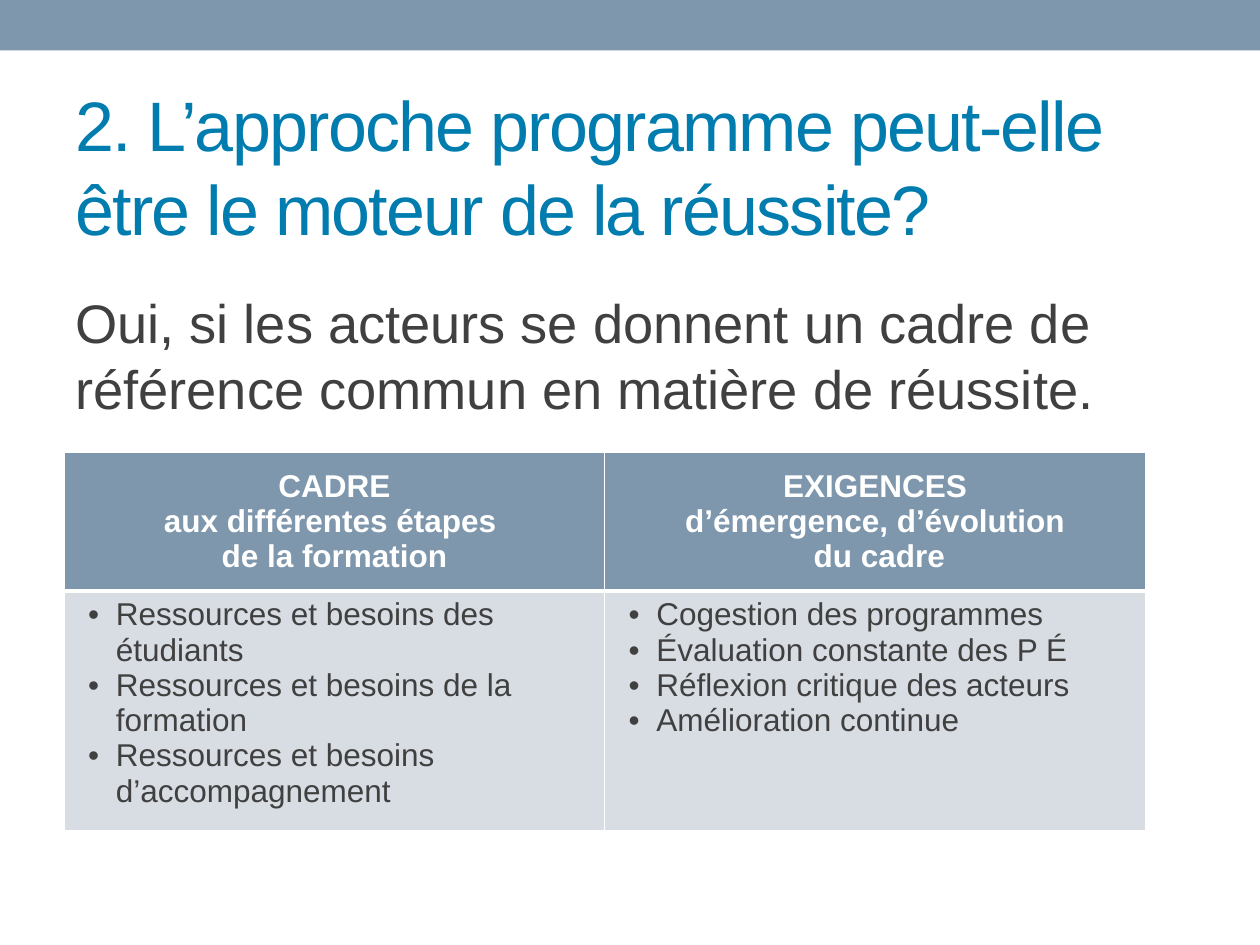
from pptx import Presentation, util as u
from pptx.dml.color import RGBColor
from pptx.enum import shapes, text
from lxml import etree

Inches, Pt = u.Inches, u.Pt
NS = "http://schemas.openxmlformats.org/drawingml/2006/main"
BLUE, WHITE, DARK, PALE = "7E97AD", "FFFFFF", "404040", "D8DDE3"


def rgb(value):
    return RGBColor.from_string(value)


def write(p, words, size=18, color=DARK, bold=False, align=None, spacing=0, bullet=False):
    p.alignment = align
    r = p.add_run()
    r.text = words
    r.font.name, r.font.size, r.font.bold = "Arial", Pt(size), bold
    r.font.color.rgb = rgb(color)
    if spacing:
        r.font._element.set("spc", str(spacing * 100))
    if bullet:
        pPr = p._p.get_or_add_pPr()
        pPr.set("marL", str(Inches(0.31)))
        pPr.set("indent", str(Inches(-0.22)))
        etree.SubElement(pPr, f"{{{NS}}}buFont", typeface="Arial")
        etree.SubElement(pPr, f"{{{NS}}}buChar", char="•")


prs = Presentation()
prs.slide_width, prs.slide_height = Inches(10), Inches(7.5)
s = prs.slides.add_slide(prs.slide_layouts[6])

# Top band
sp = s.shapes.add_shape(shapes.MSO_SHAPE.RECTANGLE, 0, 0, Inches(10), Inches(0.4))
sp.shadow.inherit = False
sp.fill.solid()
sp.fill.fore_color.rgb = rgb(BLUE)
sp.line.fill.background()

# Title and lead sentence
title = "2. L’approche programme peut-elle être le moteur de la réussite?"
lead = "Oui, si les acteurs se donnent un cadre de référence commun en matière de réussite."
for words, top, height, anchor, style in [
    (title, 0.6, 1.43, text.MSO_ANCHOR.MIDDLE, dict(size=40, color="007CAF", spacing=-1)),
    (lead, 2.25, 1.2, text.MSO_ANCHOR.TOP, dict(size=31)),
]:
    tf = s.shapes.add_textbox(Inches(0.5), Inches(top), Inches(9), Inches(height)).text_frame
    tf.word_wrap = True
    tf.vertical_anchor = anchor
    write(tf.paragraphs[0], words, **style)
tf.paragraphs[0].space_before = Pt(6)
tf.paragraphs[0].space_after = Pt(6)

# Table: a header row over a row of bulleted lists
rows = [
    [["CADRE", "aux différentes étapes ", "de la formation"],
     ["EXIGENCES", "d’émergence, d’évolution", " du cadre"]],
    [["Ressources et besoins des étudiants",
      "Ressources et besoins de la formation",
      "Ressources et besoins d’accompagnement"],
     ["Cogestion des programmes", "Évaluation constante des P É",
      "Réflexion critique des acteurs", "Amélioration continue"]],
]
table = s.shapes.add_table(2, 2, Inches(0.51), Inches(3.59), Inches(8.58), Inches(2.87)).table
table.rows[0].height, table.rows[1].height = Inches(1.1), Inches(1.77)
header = dict(color=WHITE, bold=True, align=text.PP_ALIGN.CENTER)
for i, row in enumerate(rows):
    for j, lines in enumerate(row):
        cell = table.cell(i, j)
        cell.vertical_anchor = text.MSO_ANCHOR.TOP if i else text.MSO_ANCHOR.MIDDLE
        tf = cell.text_frame
        for k, line in enumerate(lines):
            p = tf.add_paragraph() if k else tf.paragraphs[0]
            write(p, line, **(dict(bullet=True) if i else header))
        # White borders, thicker between the two rows
        tcPr = cell._tc.get_or_add_tcPr()
        for side in "LRTB":
            thick = (i, side) in [(0, "B"), (1, "T")]
            ln = etree.SubElement(tcPr, f"{{{NS}}}ln{side}", w=str(Pt(3 if thick else 1)))
            fill = etree.SubElement(ln, f"{{{NS}}}solidFill")
            etree.SubElement(fill, f"{{{NS}}}srgbClr", val=WHITE)
        cell.fill.solid()
        cell.fill.fore_color.rgb = rgb(PALE if i else BLUE)

prs.save("out.pptx")
